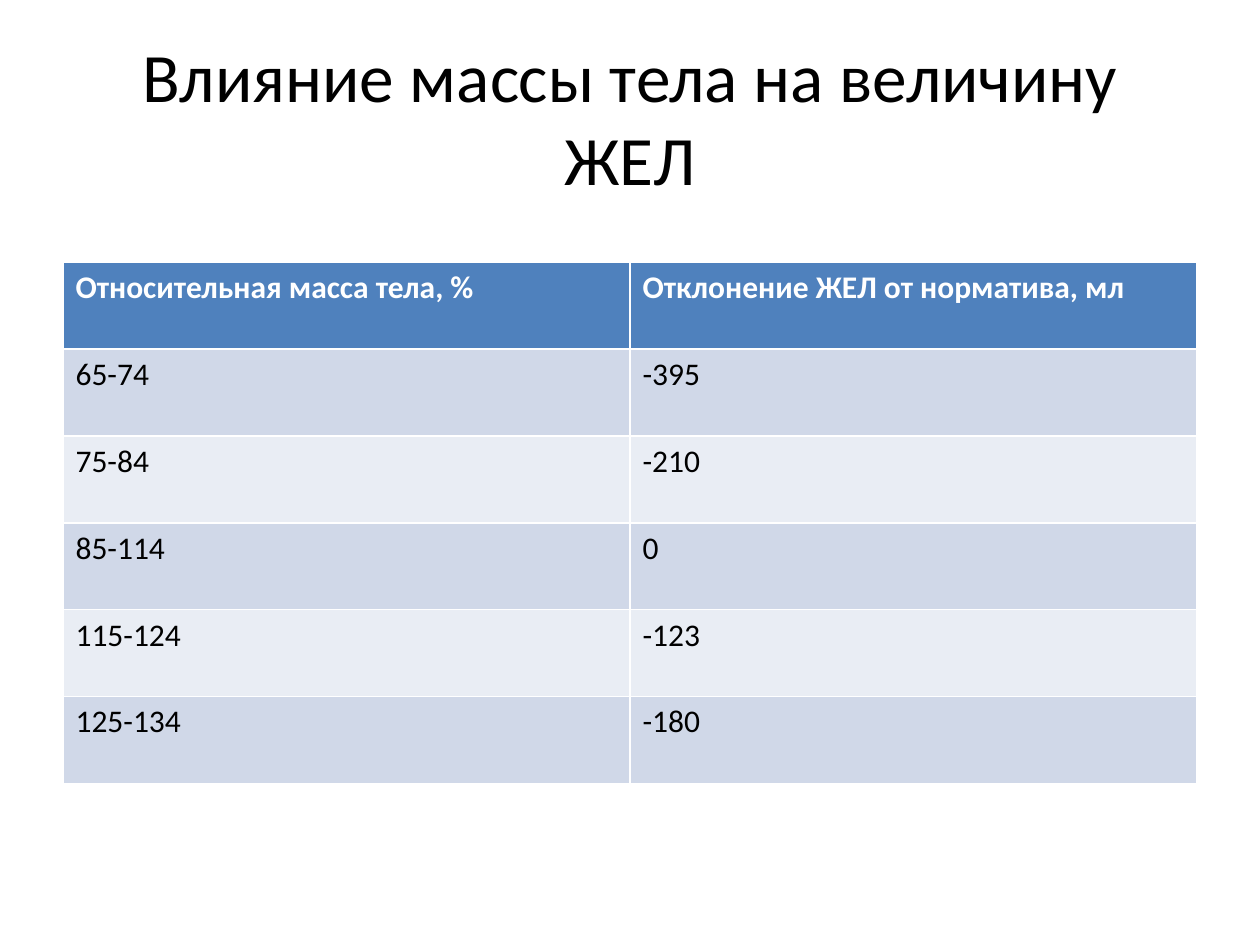
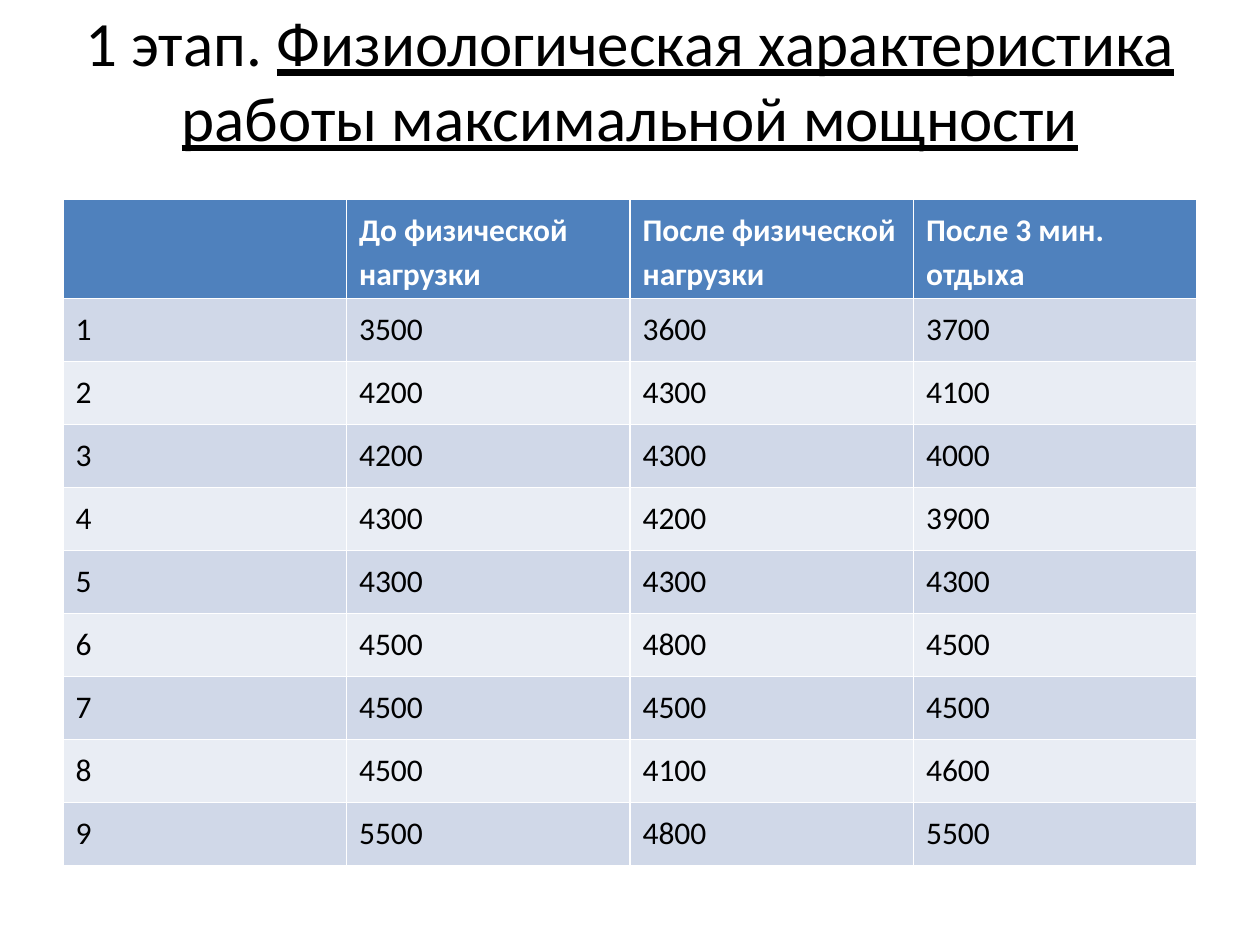
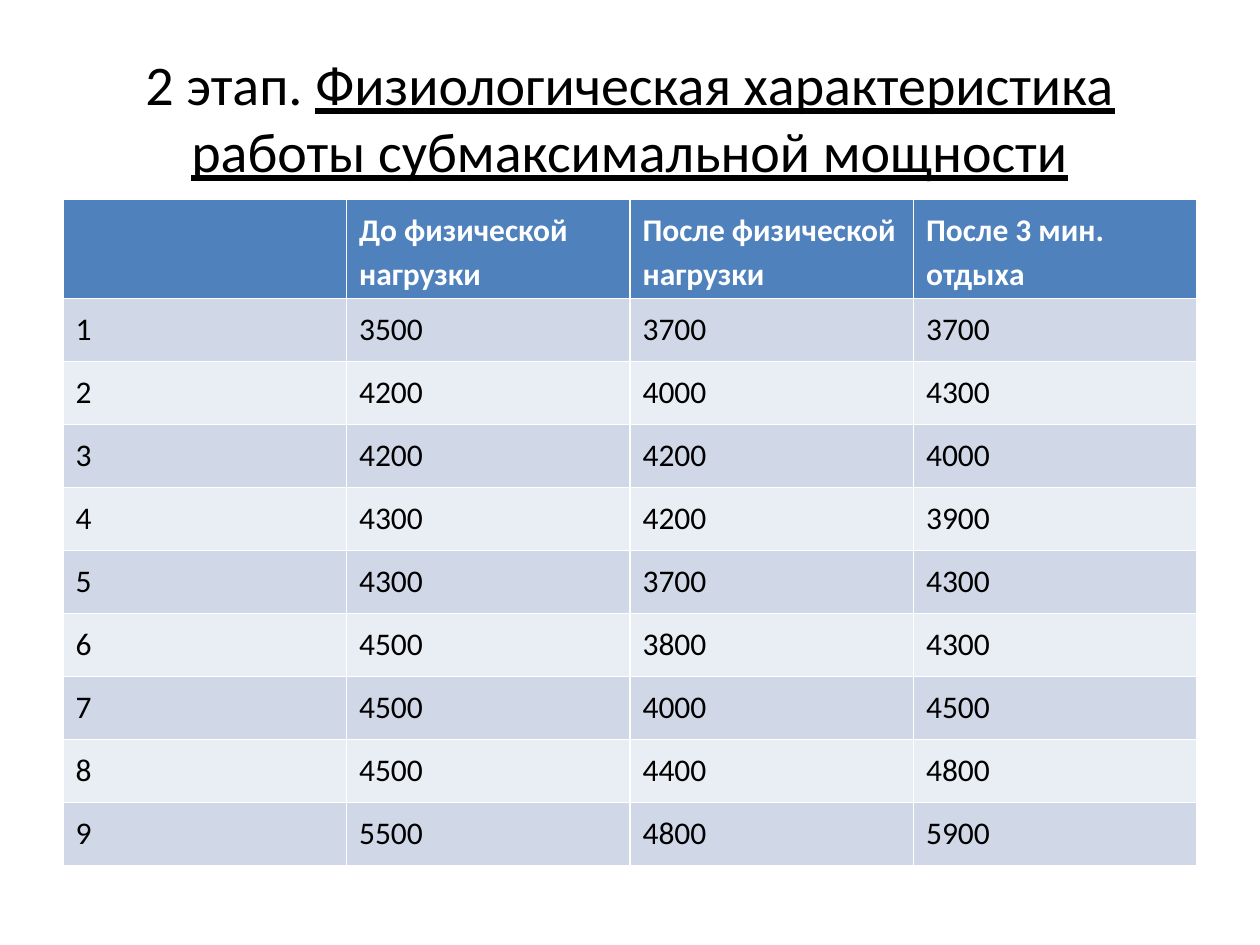
import pptx
import pptx.util
import pptx.dml.color
import pptx.enum.text

Inches, Pt = pptx.util.Inches, pptx.util.Pt
RGB = pptx.dml.color.RGBColor.from_string
COLORS = {"text": "000000", "header": "4F81BD", "header_text": "FFFFFF",
          "odd": "D0D8E8", "even": "E9EDF4"}
FONT = "Calibri"
W, H = Inches(10), Inches(7.5)
MARGIN = int(W * 0.05)
CONTENT_W = W - 2 * MARGIN

load_header = ["", "До физической нагрузки", "После физической нагрузки",
               "После 3 мин. отдыха"]
slides = [
    {"title": "Влияние массы тела на величину ЖЕЛ", "underlined": "", "size": 39.6,
     "top": 2.08, "header_h": 0.69, "row_h": 0.69, "spacing": 1.0,
     "rows": [["Относительная масса тела, %", "Отклонение ЖЕЛ от норматива, мл"],
              ["65-74", -395], ["75-84", -210], ["85-114", 0],
              ["115-124", -123], ["125-134", -180]]},
    {"title": "1 этап. ",
     "underlined": "Физиологическая характеристика работы максимальной мощности",
     "size": 36, "line_below": True,
     "top": 1.58, "header_h": 0.77, "row_h": 0.5, "spacing": 1.15,
     "rows": [load_header,
              [1, 3500, 3600, 3700], [2, 4200, 4300, 4100], [3, 4200, 4300, 4000],
              [4, 4300, 4200, 3900], [5, 4300, 4300, 4300], [6, 4500, 4800, 4500],
              [7, 4500, 4500, 4500], [8, 4500, 4100, 4600], [9, 5500, 4800, 5500]]},
    {"title": "2 этап. ",
     "underlined": "Физиологическая характеристика работы субмаксимальной мощности",
     "size": 32,
     "top": 1.58, "header_h": 0.77, "row_h": 0.5, "spacing": 1.15,
     "rows": [load_header,
              [1, 3500, 3700, 3700], [2, 4200, 4000, 4300], [3, 4200, 4200, 4000],
              [4, 4300, 4200, 3900], [5, 4300, 3700, 4300], [6, 4500, 3800, 4300],
              [7, 4500, 4000, 4500], [8, 4500, 4400, 4800], [9, 5500, 4800, 5900]]},
]


def set_font(p, size, color, bold=False):
    p.font.name, p.font.size, p.font.bold = FONT, Pt(size), bold
    p.font.color.rgb = RGB(COLORS[color])


prs = pptx.Presentation()
prs.slide_width, prs.slide_height = W, H

for data in slides:
    s = prs.slides.add_slide(prs.slide_layouts[6])

    tf = s.shapes.add_textbox(MARGIN, int(H * 0.04), CONTENT_W, H // 6).text_frame
    tf.word_wrap = True
    tf.vertical_anchor = pptx.enum.text.MSO_ANCHOR.MIDDLE
    p = tf.paragraphs[0]
    p.alignment = pptx.enum.text.PP_ALIGN.CENTER
    set_font(p, data["size"], "text")
    p.add_run().text = data["title"]
    if data["underlined"]:
        r = p.add_run()
        r.text = data["underlined"]
        r.font.underline = True
    if data.get("line_below"):
        p.add_line_break()

    rows = data["rows"]
    heights = [data["header_h"]] + [data["row_h"]] * (len(rows) - 1)
    table = s.shapes.add_table(len(rows), len(rows[0]), MARGIN, Inches(data["top"]),
                               CONTENT_W, Inches(sum(heights))).table
    for i, values in enumerate(rows):
        table.rows[i].height = Inches(heights[i])
        fill = "header" if i == 0 else "odd" if i % 2 else "even"
        for j, value in enumerate(values):
            cell = table.cell(i, j)
            cell.fill.solid()
            cell.fill.fore_color.rgb = RGB(COLORS[fill])
            cell.text = str(value)
            p = cell.text_frame.paragraphs[0]
            p.line_spacing = data["spacing"]
            set_font(p, 18, "text" if i else "header_text", bold=i == 0)

prs.save("out.pptx")
